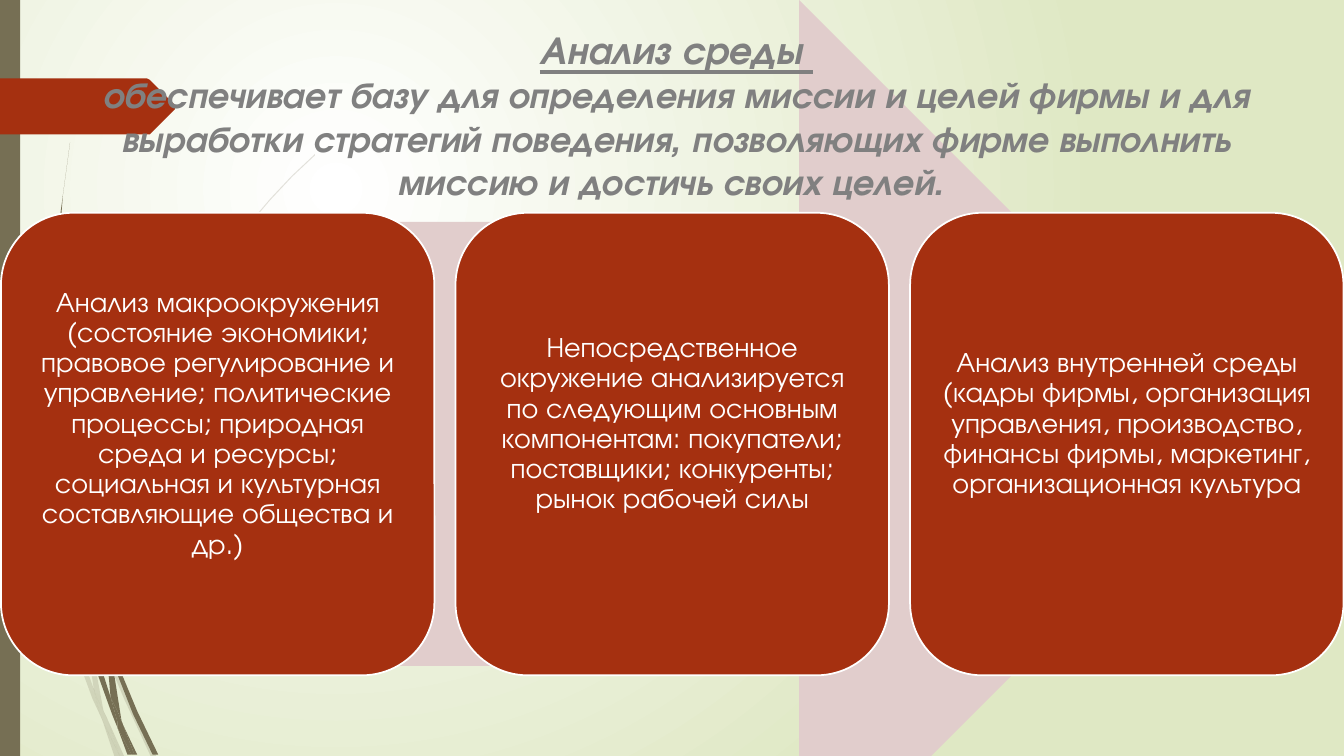
from dataclasses import dataclass

from pptx import Presentation
from pptx.dml.color import RGBColor
from pptx.enum.shapes import MSO_SHAPE as Preset
from pptx.enum.text import MSO_ANCHOR as Anchor, PP_ALIGN as Align
from pptx.oxml import parse_xml
from pptx.oxml.ns import nsdecls
from pptx.util import Pt

FONT = "TeX Gyre Adventor"
OLIVE, RUST, ROSE, WHITE, GREY = "766F54", "A53010", "E1CDCC", "FFFFFF", "808080"
SLIDE_WIDTH, SLIDE_HEIGHT = 960, 540


@dataclass
class Outline:
    points: list[tuple[float, float]]
    color: str = OLIVE
    opacity: int = 100


@dataclass
class Block:
    preset: Preset
    left: float
    top: float
    width: float
    height: float
    color: str
    border: str = ""


@dataclass
class TitleLine:
    text: str
    size: int
    underline: bool


def rgb(color: str) -> RGBColor:
    return RGBColor.from_string(color)


def paint_background(slide) -> None:
    fill = slide.background.fill
    fill.gradient()
    for stop, color in zip(fill.gradient_stops, (WHITE, "DFE8C4")):
        stop.color.rgb = rgb(color)
    linear = slide.element.xpath(".//p:bg//a:lin")[0]
    linear.getparent().replace(linear, parse_xml(
        f'<a:path {nsdecls("a")} path="circle">'
        '<a:fillToRect l="50000" t="50000" r="100000" b="100000"/></a:path>'))


def draw_outline(slide, outline: Outline) -> None:
    start, *rest = outline.points
    builder = slide.shapes.build_freeform(*start, scale=Pt(1))
    builder.add_line_segments(rest, close=True)
    shape = builder.convert_to_shape()
    shape.shadow.inherit = False
    shape.fill.solid()
    shape.fill.fore_color.rgb = rgb(outline.color)
    shape.line.fill.background()
    if outline.opacity < 100:
        color = shape.element.xpath("./p:spPr/a:solidFill/a:srgbClr")[0]
        color.append(parse_xml(f'<a:alpha {nsdecls("a")} val="{outline.opacity * 1000}"/>'))


def draw_block(slide, block: Block):
    shape = slide.shapes.add_shape(block.preset, Pt(block.left), Pt(block.top),
                                   Pt(block.width), Pt(block.height))
    shape.shadow.inherit = False
    shape.fill.solid()
    shape.fill.fore_color.rgb = rgb(block.color)
    if block.border:
        shape.line.color.rgb = rgb(block.border)
        shape.line.width = Pt(1.25)
    else:
        shape.line.fill.background()
    return shape


def style_font(font, size: int, color: str) -> None:
    font.name = FONT
    font.size = Pt(size)
    font.color.rgb = rgb(color)


def draw_card(slide, block: Block, text: str) -> None:
    frame = draw_block(slide, block).text_frame
    frame.word_wrap = True
    frame.vertical_anchor = Anchor.MIDDLE
    frame.margin_left = frame.margin_right = frame.margin_top = Pt(6)
    frame.margin_bottom = Pt(34.5)
    frame.text = text
    paragraph = frame.paragraphs[0]
    paragraph.alignment = Align.CENTER
    paragraph.line_spacing = 0.9
    style_font(paragraph.runs[0].font, 20, WHITE)


def draw_title(slide, lines: list[TitleLine]) -> None:
    frame = slide.shapes.add_textbox(Pt(40.3), Pt(14.4), Pt(885.6), Pt(172)).text_frame
    frame.word_wrap = True
    frame.text = "\n".join(line.text for line in lines)
    for paragraph, line in zip(frame.paragraphs, lines):
        paragraph.alignment = Align.CENTER
        font = paragraph.runs[0].font
        style_font(font, line.size, GREY)
        font.bold = font.italic = True
        font.underline = line.underline


# Grass blades at the left edge, pale ones behind dark ones
PALE_BLADES = [
    [(66.2, 437), (63.4, 429.1), (63.4, 439.2), (88.6, 499.7), (108, 540.7),
     (111.6, 540.7), (91.4, 498.2)],
    [(85.7, 540.7), (89.3, 540.7), (75.6, 511.9)],
    [(67, 491.8), (50.4, 445.7), (22.3, 337.7), (12.2, 270.7), (7.9, 252), (20.2, 338.4),
     (46.8, 447.1), (66.2, 499), (72.7, 514.1), (71.3, 509)],
    [(60.5, 431.3), (62.6, 465.1), (67, 491.8), (69.1, 498.2), (75.6, 511.9),
     (74.2, 508.3), (65.5, 465.1), (63.4, 439.2)],
    [(63.4, 420.5), (79.2, 332.6), (115.2, 251.3), (164.9, 176.4), (193, 142.6),
     (208.8, 126), (224.6, 110.9), (224.6, 110.2), (208.1, 126), (193, 141.8),
     (164.2, 175.7), (113.8, 250.6), (77, 331.9), (61.2, 420.5), (61.2, 421.9),
     (63.4, 429.1)],
    [(72.7, 514.1), (82.1, 540.7), (85.7, 540.7)],
    [(69.1, 498.2), (67, 491.8), (71.3, 509), (72.7, 514.1), (85.7, 540.7), (75.6, 511.9)],
]
DARK_BLADES = [
    [(5, 79.2), (12.2, 167.8), (23.8, 255.6), (40.3, 343.4), (41, 346.3), (39.6, 329),
     (39.6, 326.2), (25.9, 255.6), (13.7, 167), (5.8, 78.5), (3.6, 34.6), (2.9, 0),
     (2.2, 0), (2.9, 34.6)],
    [(81.4, 467.3), (79.2, 461.5), (79.9, 472.3), (95, 509.8), (109.4, 539.3),
     (113, 539.3), (97.9, 508.3)],
    [(79.2, 497.5), (70.6, 473), (51.8, 400.3), (46.1, 363.6), (41, 343.4), (49, 401),
     (67, 474.5), (79.9, 509.8), (84.2, 519.8), (83.5, 516.2)],
    [(43.2, 339.8), (41.8, 326.2), (38.9, 251.3), (41.8, 176.4), (45.4, 139),
     (50.4, 101.5), (44.6, 139), (40.3, 176.4), (37.4, 251.3), (39.6, 323.3)],
    [(95.8, 539.3), (97.9, 539.3), (87.8, 517.7)],
    [(84.2, 519.8), (91.4, 539.3), (94.3, 539.3)],
    [(76.3, 464.4), (79.2, 497.5), (83.5, 508.3), (87.8, 517.7), (87.1, 515.5),
     (79.9, 472.3), (78.5, 468.7)],
    [(83.5, 508.3), (79.2, 497.5), (83.5, 516.2), (84.2, 519.8), (93.6, 539.3),
     (95.8, 539.3), (87.8, 517.7)],
]
RUST_TAG = Outline([(0, 56.2), (105, 56.2), (106.6, 56.9), (124.6, 74.9), (125.2, 76.3),
                    (124.6, 77.8), (106.6, 95.8), (105, 96.4), (0, 95.8)], RUST)

# Wording
TITLE = [
    TitleLine("Анализ среды ", 28, True),
    TitleLine("обеспечивает базу для определения миссии и целей фирмы и для выработки "
              "стратегий поведения, позволяющих фирме выполнить миссию и достичь своих "
              "целей. ", 26, False),
]
ANALYSES = [
    "Анализ макроокружения (состояние экономики; правовое регулирование и управление; "
    "политические процессы; природная среда и ресурсы; социальная и культурная "
    "составляющие общества и др.)",
    "Непосредственное окружение анализируется по следующим основным компонентам: "
    "покупатели; поставщики; конкуренты; рынок рабочей силы",
    "Анализ внутренней среды (кадры фирмы, организация управления, производство, "
    "финансы фирмы, маркетинг, организационная культура",
]
CARD_LEFT, CARD_PITCH = 0.7, 324.7


def main() -> None:
    deck = Presentation()
    deck.slide_width, deck.slide_height = Pt(SLIDE_WIDTH), Pt(SLIDE_HEIGHT)
    slide = deck.slides.add_slide(deck.slide_layouts[6])

    # Backdrop
    paint_background(slide)
    for blade in PALE_BLADES:
        draw_outline(slide, Outline(blade, opacity=20))
    for blade in DARK_BLADES:
        draw_outline(slide, Outline(blade))
    draw_block(slide, Block(Preset.RECTANGLE, 0, 0, 14.4, SLIDE_HEIGHT, OLIVE))
    draw_outline(slide, RUST_TAG)

    # Arrow with the three levels of analysis
    draw_block(slide, Block(Preset.RIGHT_ARROW, 72, 0, 816, 634.3, ROSE))
    for index, analysis in enumerate(ANALYSES):
        left = CARD_LEFT + index * CARD_PITCH
        card = Block(Preset.ROUNDED_RECTANGLE, left, 152, 309.6, 330.4, RUST, WHITE)
        draw_card(slide, card, analysis)

    draw_title(slide, TITLE)
    deck.save("out.pptx")


if __name__ == "__main__":
    main()
